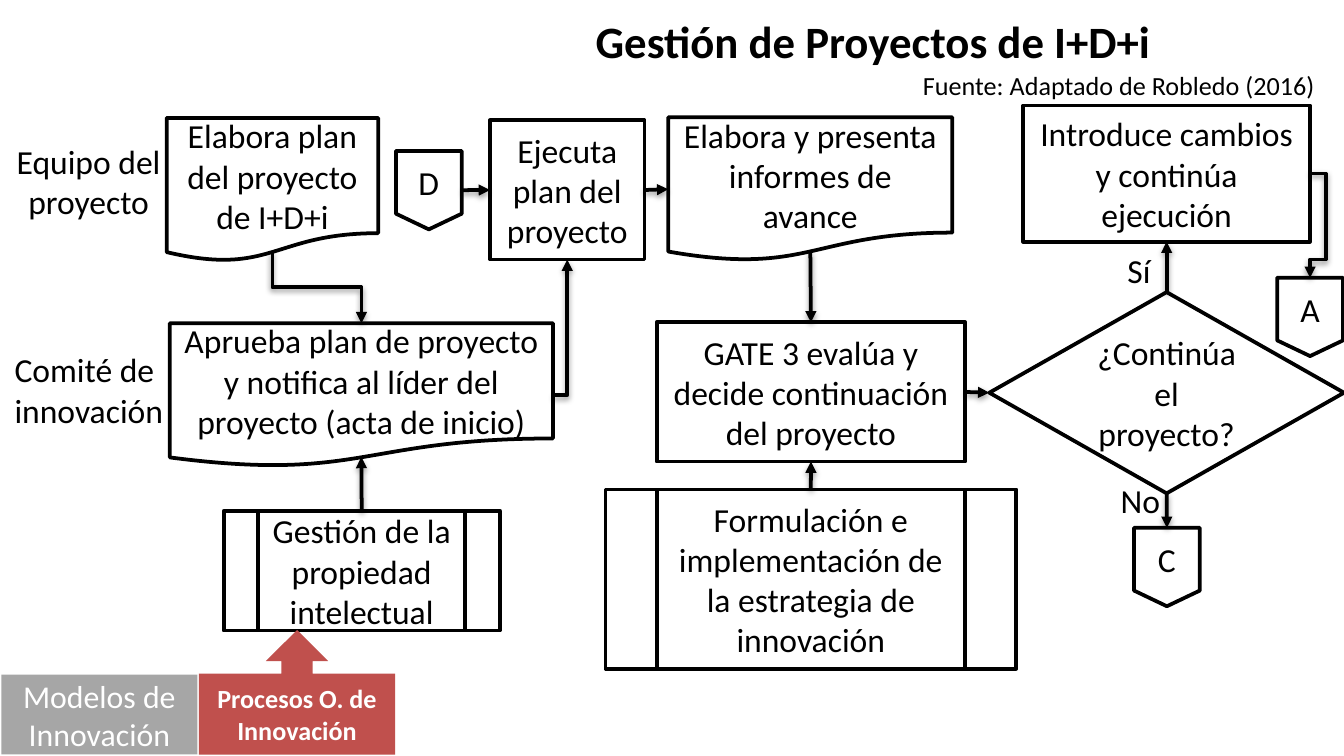
from lxml.etree import SubElement
from pptx import Presentation
from pptx.dml.color import RGBColor
from pptx.enum.shapes import MSO_CONNECTOR, MSO_SHAPE
from pptx.enum.text import MSO_ANCHOR, MSO_AUTO_SIZE, PP_ALIGN
from pptx.oxml.ns import qn
from pptx.util import Pt

COLORS = {"ink": "000000", "paper": "FFFFFF", "models": "A6A6A6", "processes": "C0504D"}
FONT = "Calibri"
TITLE = ("Gestión de Proyectos de I+D+i", (215.3, 3.6, 504.7, 36))

LABELS = [
    ("Fuente: Adaptado de Robledo (2016)", (487.4, 33.8, 232.6, 24.5), {"size": 14}),
    ("Equipo del proyecto", (0.7, 72, 93.6, 51), {"align": PP_ALIGN.CENTER}),
    ("Comité de innovación", (0.7, 183.6, 104.4, 51), {}),
    ("Sí", (596.9, 130.3, 27.4, 29), {"wrap": False}),
    ("No", (593.3, 253.4, 36, 29), {"wrap": False}),
]

DOCUMENT = MSO_SHAPE.FLOWCHART_DOCUMENT
PROCESS = MSO_SHAPE.RECTANGLE
SUBPROCESS = MSO_SHAPE.FLOWCHART_PREDEFINED_PROCESS
OFFPAGE = MSO_SHAPE.FLOWCHART_OFFPAGE_CONNECTOR
DECISION = MSO_SHAPE.FLOWCHART_DECISION

STEPS = {
    "approve": (DOCUMENT, "Aprueba plan de proyecto y notifica al líder del proyecto (acta de inicio)",
                (91, 173.2, 205.2, 77)),
    "plan": (DOCUMENT, "Elabora plan del proyecto de I+D+i", (89.3, 63.2, 113.3, 77)),
    "execute": (PROCESS, "Ejecuta plan del proyecto", (262.5, 64.5, 82.8, 74.6)),
    "property": (SUBPROCESS, "Gestión de la propiedad intelectual", (119.9, 273.6, 147.8, 64.2)),
    "A": (OFFPAGE, "A", (684.2, 148.8, 35.3, 42)),
    "report": (DOCUMENT, "Elabora y presenta informes de avance", (358, 62.9, 152.2, 77)),
    "gate": (PROCESS, "GATE 3 evalúa y decide continuación del proyecto", (351.8, 172.7, 165.3, 74.6)),
    "strategy": (SUBPROCESS, "Formulación e implementación de la estrategia de innovación",
                 (324.4, 262.2, 220, 96)),
    "decide": (DECISION, "¿Continúa el proyecto?", (530, 156.5, 190, 107.8)),
    "change": (PROCESS, "Introduce cambios y continúa ejecución", (548.2, 56.5, 153.6, 73)),
    "C": (OFFPAGE, "C", (607.5, 282.8, 35.3, 42)),
    "D": (OFFPAGE, "D", (212.1, 80.9, 35.3, 42)),
}

BADGES = [
    (PROCESS, "Modelos de Innovación", (0.7, 361.4, 105.1, 42.8), "models", {"size": 17}),
    (MSO_SHAPE.UP_ARROW_CALLOUT, "Procesos O. de Innovación", (106.6, 337.5, 105.1, 66.8),
     "processes", {"size": 14, "bold": True}),
]

STRAIGHT_FLOWS = [
    ("property", "top", "approve", "bottom"),
    ("D", "right", "execute", "left"),
    ("execute", "right", "report", "left"),
    ("report", "bottom", "gate", "top"),
    ("strategy", "top", "gate", "bottom"),
    ("gate", "right", "decide", "left"),
    ("decide", "top", "change", "bottom"),
    ("decide", "bottom", "C", "top"),
]

SIDES = ["top", "left", "bottom", "right"]
DOCUMENT_BOTTOM = 0.93
RETURN_BEND = (709.2, 139)


def color(name):
    return RGBColor.from_string(COLORS[name])


def write(shape, text, size=18, bold=False, ink="ink", align=PP_ALIGN.LEFT,
          anchor=MSO_ANCHOR.TOP, wrap=True):
    frame = shape.text_frame
    frame.word_wrap = wrap
    frame.auto_size = MSO_AUTO_SIZE.NONE
    frame.vertical_anchor = anchor
    para = frame.paragraphs[0]
    para.alignment = align
    span = para.add_run()
    span.text = text
    span.font.name = FONT
    span.font.size = Pt(size)
    span.font.bold = bold
    span.font.color.rgb = color(ink)


def add_box(page, kind, text, place, fill, outlined=False, **style):
    box = page.shapes.add_shape(kind, *map(Pt, place))
    box.shadow.inherit = False
    box.fill.solid()
    box.fill.fore_color.rgb = color(fill)
    if outlined:
        box.line.color.rgb = color("ink")
        box.line.width = Pt(2)
    else:
        box.line.fill.background()
    write(box, text, align=PP_ALIGN.CENTER, anchor=MSO_ANCHOR.MIDDLE, **style)
    return box


def site(name, side):
    kind, _, (left, top, width, height) = STEPS[name]
    depth = DOCUMENT_BOTTOM if kind == DOCUMENT else 1
    across, down = {"top": (0.5, 0), "left": (0, 0.5), "bottom": (0.5, depth), "right": (1, 0.5)}[side]
    return left + across * width, top + down * height


def add_arrow(page, kind, start, end):
    arrow = page.shapes.add_connector(kind, *map(Pt, (*start, *end)))
    arrow.line.color.rgb = color("ink")
    arrow.line.width = Pt(2)
    SubElement(arrow.line._get_or_add_ln(), qn("a:tailEnd"), type="triangle")
    effects = SubElement(arrow._element.spPr, qn("a:effectLst"))
    shadow = SubElement(effects, qn("a:outerShdw"), blurRad=str(Pt(3.1)), dist=str(Pt(1.6)),
                        dir="5400000", rotWithShape="0")
    tint = SubElement(shadow, qn("a:srgbClr"), val=COLORS["ink"])
    SubElement(tint, qn("a:alpha"), val="38000")
    return arrow


def set_route(arrow, preset, *bends):
    geometry = arrow._element.spPr.find(qn("a:prstGeom"))
    geometry.set("prst", preset)
    guides = geometry.find(qn("a:avLst"))
    for number, bend in enumerate(bends, 1):
        SubElement(guides, qn("a:gd"), name=f"adj{number}", fmla=f"val {round(bend * 100000)}")


def add_straight_flow(page, boxes, source, source_side, target, target_side):
    start, end = site(source, source_side), site(target, target_side)
    arrow = add_arrow(page, MSO_CONNECTOR.STRAIGHT, start, end)
    arrow.begin_connect(boxes[source], SIDES.index(source_side))
    arrow.end_connect(boxes[target], SIDES.index(target_side))
    arrow.begin_y, arrow.end_y = Pt(start[1]), Pt(end[1])


def add_bent_flows(page):
    (x1, y1), (x2, y2) = site("plan", "bottom"), site("approve", "top")
    middle_x, middle_y = (x1 + x2) / 2, (y1 + y2) / 2
    half_run, half_drop = (x2 - x1) / 2, (y2 - y1) / 2
    arrow = add_arrow(page, MSO_CONNECTOR.ELBOW, (middle_x + half_drop, middle_y - half_run),
                      (middle_x - half_drop, middle_y + half_run))
    arrow._element.spPr.find(qn("a:xfrm")).set("rot", "16200000")

    arrow = add_arrow(page, MSO_CONNECTOR.ELBOW, site("approve", "right"), site("execute", "bottom"))
    set_route(arrow, "bentConnector2")

    (x1, y1), (x2, y2) = site("change", "right"), site("A", "top")
    arrow = add_arrow(page, MSO_CONNECTOR.ELBOW, (x1, y1), (x2, y2))
    set_route(arrow, "bentConnector4", (RETURN_BEND[0] - x1) / (x2 - x1),
              (RETURN_BEND[1] - y1) / (y2 - y1))


def main():
    deck = Presentation()
    deck.slide_width, deck.slide_height = Pt(720), Pt(405)
    page = deck.slides.add_slide(deck.slide_layouts[5])
    title = page.shapes.title
    text, place = TITLE
    title.left, title.top, title.width, title.height = map(Pt, place)
    write(title, text, size=24, bold=True, align=PP_ALIGN.CENTER)
    for text, place, style in LABELS:
        write(page.shapes.add_textbox(*map(Pt, place)), text, **style)
    boxes = {name: add_box(page, *step, "paper", outlined=True) for name, step in STEPS.items()}
    for kind, text, place, fill, style in BADGES:
        add_box(page, kind, text, place, fill, ink="paper", **style)
    for flow in STRAIGHT_FLOWS:
        add_straight_flow(page, boxes, *flow)
    add_bent_flows(page)
    deck.save("out.pptx")


if __name__ == "__main__":
    main()
